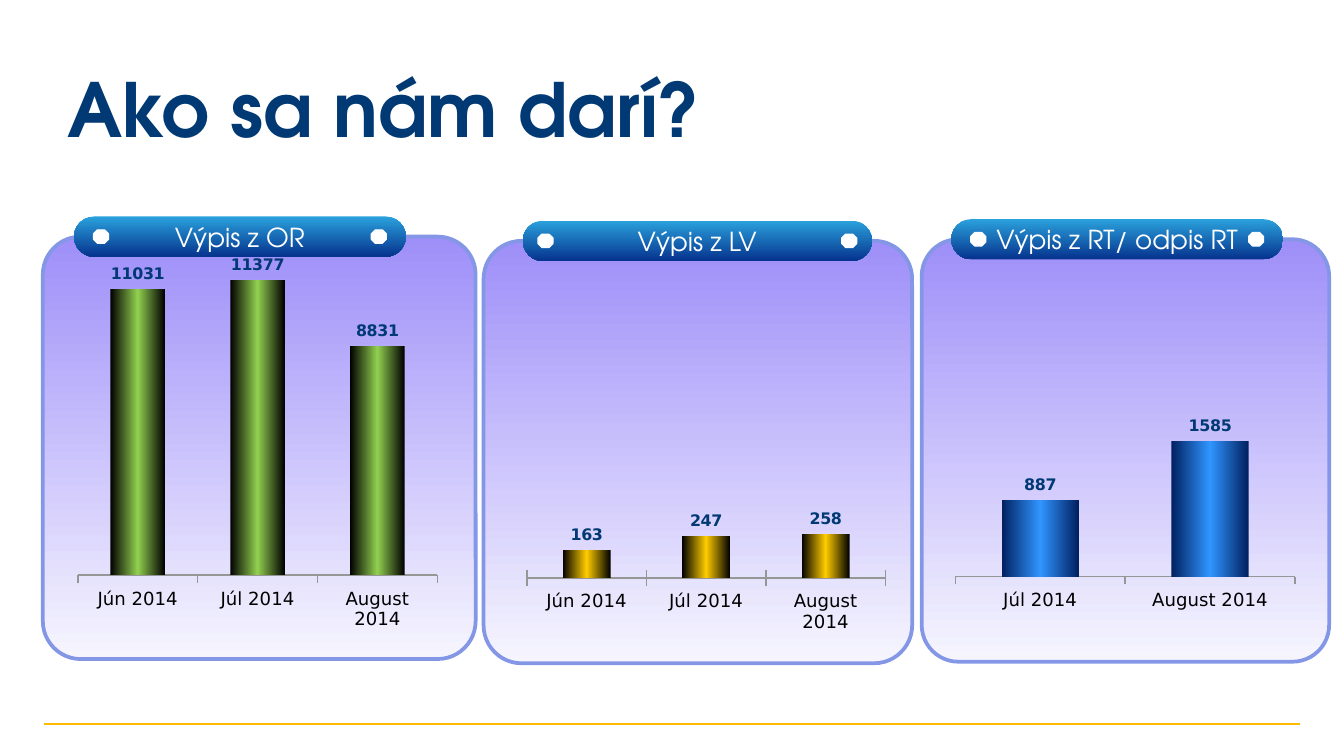
from copy import deepcopy

from lxml import etree
from pptx import Presentation
from pptx.chart.data import CategoryChartData
from pptx.dml.color import RGBColor
from pptx.enum.chart import XL_CHART_TYPE, XL_LABEL_POSITION, XL_TICK_LABEL_POSITION, XL_TICK_MARK
from pptx.enum.shapes import MSO_CONNECTOR, MSO_SHAPE
from pptx.enum.text import MSO_ANCHOR, PP_ALIGN
from pptx.oxml.ns import qn
from pptx.util import Cm, Pt

NAVY = RGBColor(0x00, 0x39, 0x73)
WHITE = RGBColor(0xFF, 0xFF, 0xFF)
BLACK = RGBColor(0x00, 0x00, 0x00)
GOLD = RGBColor(0xFA, 0xBB, 0x00)
GREY = RGBColor(0x96, 0x96, 0x96)
PANEL_TOP = RGBColor(0x9E, 0x8F, 0xF9)
PANEL_BOTTOM = RGBColor(0xF6, 0xF5, 0xFE)
PANEL_EDGE = RGBColor(0x84, 0x97, 0xE6)
PILL_TOP = RGBColor(0x2A, 0xA1, 0xDC)
PILL_BOTTOM = RGBColor(0x06, 0x33, 0x8E)
GREEN = RGBColor(0x92, 0xD0, 0x50)
YELLOW = RGBColor(0xFF, 0xCC, 0x00)
BLUE = RGBColor(0x30, 0x95, 0xFF)
DARK_BLUE = RGBColor(0x00, 0x20, 0x60)

HEADING_FONT = "TeX Gyre Adventor"
CHART_FONT = "DejaVu Sans"
PANEL_HEIGHT, PILL_HEIGHT, PILL_RISE = 7.98, 0.76, 0.38
DOT_WIDTH, DOT_HEIGHT = 0.28, 0.25

# Box is left, top, width; the pill and chart are placed relative to it
PANELS = [
    dict(title="Výpis z LV", box=(9.14, 4.55, 8.1), pill=(0.74, 6.6), dot_inset=0.29,
         chart=(0.58, 0.66, 7.21, 6.96), plot=(0.033, 0.683, 0.94, 0.137),
         months=["Jún 2014", "Júl 2014", "August 2014"], counts=[163, 247, 258],
         maximum=300, gap=150, tick=XL_TICK_MARK.CROSS, colors=[BLACK, YELLOW, BLACK]),
    dict(title="Výpis z RT/ odpis RT", box=(17.42, 4.52, 7.7), pill=(0.56, 6.27), dot_inset=0.37,
         chart=(0.41, 0.69, 6.83, 6.93), plot=(0.033, 0.399, 0.94, 0.421),
         months=["Júl 2014", "August 2014"], counts=[887, 1585],
         maximum=1800, gap=120, tick=XL_TICK_MARK.OUTSIDE, colors=[DARK_BLUE, BLUE, DARK_BLUE]),
    dict(title="Výpis z OR", box=(0.81, 4.47, 8.18), pill=(0.59, 6.27), dot_inset=0.37,
         chart=(0.43, 0.38, 7.04, 7.14), plot=(0.033, 0, 0.967, 0.842),
         months=["Jún 2014", "Júl 2014", "August 2014"], counts=[11031, 11377, 8831],
         maximum=12265, gap=120, tick=XL_TICK_MARK.OUTSIDE, colors=[BLACK, GREEN, BLACK]),
]


def set_font(font, color, **values):
    for name, value in values.items():
        setattr(font, name, value)
    font.color.rgb = color


def fill_gradient(fill, element, colors, angle):
    """Spread the colours evenly over the gradient of the given element."""
    fill.gradient()
    fill.gradient_angle = angle
    stop_list = next(element.iter(qn("a:gsLst")))
    for _ in colors[2:]:
        stop_list.append(deepcopy(stop_list[0]))
    for index, (stop, color) in enumerate(zip(fill.gradient_stops, colors)):
        stop.position = index / (len(colors) - 1)
        stop.color.rgb = color


def add_box(page, kind, left, top, width, height):
    box = page.shapes.add_shape(kind, Cm(left), Cm(top), Cm(width), Cm(height))
    box.shadow.inherit = False
    return box


def add_heading(page, left, top, width, height):
    box = page.shapes.add_textbox(Cm(left), Cm(top), Cm(width), Cm(height))
    box.text_frame.word_wrap = True
    span = box.text_frame.paragraphs[0].add_run()
    span.text = "Ako sa nám darí?"
    set_font(span.font, NAVY, name=HEADING_FONT, size=Pt(40), bold=True)


def add_footer_line(page, left, top, width):
    line = page.shapes.add_connector(MSO_CONNECTOR.STRAIGHT, Cm(left), Cm(top), Cm(left + width), Cm(top))
    line.line.color.rgb = GOLD
    line.line.width = Pt(1)
    etree.SubElement(line._element.spPr, qn("a:effectLst"))


def set_plot_layout(chart, bounds):
    plot_area = chart._chartSpace.chart.plotArea
    for old in plot_area.findall(qn("c:layout")):
        plot_area.remove(old)
    layout = etree.Element(qn("c:layout"))
    manual = etree.SubElement(layout, qn("c:manualLayout"))
    settings = [("layoutTarget", "inner"), ("xMode", "edge"), ("yMode", "edge"),
                *zip("xywh", bounds)]
    for tag, value in settings:
        etree.SubElement(manual, qn(f"c:{tag}")).set("val", str(value))
    plot_area.insert(0, layout)


def add_column_chart(page, left, top, width, height, panel):
    data = CategoryChartData()
    data.categories = panel["months"]
    data.add_series("Series 1", panel["counts"])
    chart = page.shapes.add_chart(XL_CHART_TYPE.COLUMN_CLUSTERED, Cm(left), Cm(top),
                                  Cm(width), Cm(height), data).chart
    chart.has_title = chart.has_legend = False
    set_font(chart.font, NAVY, name=CHART_FONT, size=Pt(8.5), bold=True)
    set_plot_layout(chart, panel["plot"])

    # Columns and their values
    plot = chart.plots[0]
    plot.gap_width = panel["gap"]
    plot.vary_by_categories = False
    series = plot.series[0]
    fill_gradient(series.format.fill, series._element, panel["colors"], 0)
    plot.has_data_labels = True
    labels = plot.data_labels
    labels.show_value = True
    labels.position = XL_LABEL_POSITION.OUTSIDE_END
    set_font(labels.font, NAVY, name=CHART_FONT, size=Pt(8.5), bold=True)

    # Axes
    months = chart.category_axis
    months.major_tick_mark = panel["tick"]
    months.format.line.color.rgb = GREY
    months.format.line.width = Pt(0.81)
    set_font(months.tick_labels.font, BLACK, name=CHART_FONT, size=Pt(9.7), bold=False)
    counts = chart.value_axis
    values = dict(minimum_scale=0, maximum_scale=panel["maximum"], has_major_gridlines=False,
                  major_tick_mark=XL_TICK_MARK.NONE,
                  tick_label_position=XL_TICK_LABEL_POSITION.NONE)
    for name, value in values.items():
        setattr(counts, name, value)
    counts.format.line.fill.background()


def add_pill(page, left, top, width, title, dot_inset):
    pill = add_box(page, MSO_SHAPE.ROUNDED_RECTANGLE, left, top, width, PILL_HEIGHT)
    pill.adjustments[0] = 0.5
    fill_gradient(pill.fill, pill._element, [PILL_TOP, PILL_BOTTOM], 270)
    pill.line.fill.background()
    frame = pill.text_frame
    frame.word_wrap = False
    frame.vertical_anchor = MSO_ANCHOR.MIDDLE
    para = frame.paragraphs[0]
    para.alignment = PP_ALIGN.CENTER
    span = para.add_run()
    span.text = title
    set_font(span.font, WHITE, name=HEADING_FONT, size=Pt(14))

    # A dot near each end
    for dot_left in (left + dot_inset, left + width - dot_inset - DOT_WIDTH):
        dot = add_box(page, MSO_SHAPE.OCTAGON, dot_left, top + (PILL_HEIGHT - DOT_HEIGHT) / 2,
                      DOT_WIDTH, DOT_HEIGHT)
        dot.fill.solid()
        dot.fill.fore_color.rgb = dot.line.color.rgb = WHITE
        dot.line.width = Pt(0.75)


def add_panel(page, left, top, width, panel):
    back = add_box(page, MSO_SHAPE.ROUNDED_RECTANGLE, left, top, width, PANEL_HEIGHT)
    back.adjustments[0] = 0.09
    fill_gradient(back.fill, back._element, [PANEL_TOP, PANEL_BOTTOM], 270)
    back.line.color.rgb = PANEL_EDGE
    back.line.width = Pt(2)
    chart_left, chart_top, *chart_size = panel["chart"]
    add_column_chart(page, left + chart_left, top + chart_top, *chart_size, panel)
    pill_left, pill_width = panel["pill"]
    add_pill(page, left + pill_left, top - PILL_RISE, pill_width, panel["title"], panel["dot_inset"])


def main():
    deck = Presentation()
    deck.slide_width, deck.slide_height = Cm(25.4), Cm(14.28)
    page = deck.slides.add_slide(deck.slide_layouts[6])
    add_footer_line(page, 0.84, 13.67, 23.72)
    for panel in PANELS:
        add_panel(page, *panel["box"], panel)
    add_heading(page, 1.02, 1.07, 20.02, 1.96)
    deck.save("out.pptx")


if __name__ == "__main__":
    main()
